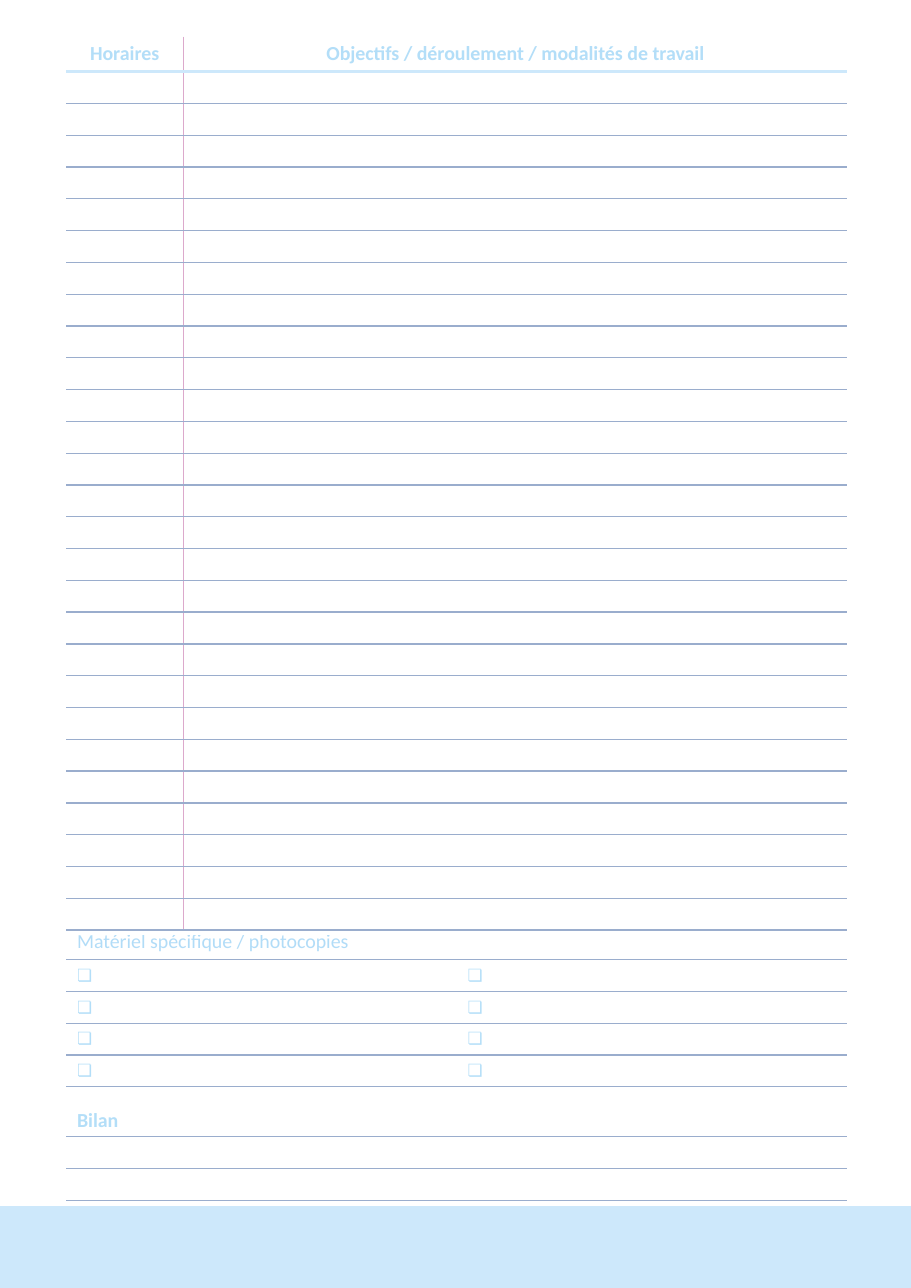
import lxml.etree
import pptx
import pptx.dml.color
import pptx.enum.shapes
import pptx.enum.text
import pptx.oxml.ns
import pptx.util

COLORS = {
    "paper": "FFFFFF",
    "band": "CDE8FB",
    "text": "B3DEF8",
    "caption": "9DD3F6",
    "rule": "9AADCD",
    "margin": "DCA9CC",
}
RULED_ROWS = 27
CHECK_ROWS = 4
CHECKBOX = "❏"


def add_element(parent, tag, **attributes):
    return lxml.etree.SubElement(parent, pptx.oxml.ns.qn(tag), **attributes)


class PlannerPage:
    font = "Calibri"
    left, top = 0.6, 0.65
    column = 7.09 / 20
    row = (8.45 - 0.65) / RULED_ROWS

    def __init__(self, presentation):
        self.width = presentation.slide_width
        self.height = presentation.slide_height
        self.slide = presentation.slides.add_slide(presentation.slide_layouts[6])

    def columns(self, count):
        return pptx.util.Inches(count * self.column)

    def rows(self, count):
        return pptx.util.Inches(count * self.row)

    def row_top(self, row):
        return pptx.util.Inches(self.top) + self.rows(row)

    def color(self, name):
        return pptx.dml.color.RGBColor.from_string(COLORS[name])

    def band(self, row):
        top = self.row_top(row)
        shape = self.slide.shapes.add_shape(
            pptx.enum.shapes.MSO_SHAPE.RECTANGLE, 0, top, self.width, self.height - top)
        shape.shadow.inherit = False
        shape.fill.solid()
        shape.fill.fore_color.rgb = self.color("band")
        shape.line.color.rgb = self.color("band")
        shape.line.width = pptx.util.Pt(1)

    def table(self, row, widths, heights):
        frame = self.slide.shapes.add_table(
            len(heights), len(widths), pptx.util.Inches(self.left), self.row_top(row),
            self.columns(sum(widths)), self.rows(sum(heights)))
        table = frame.table
        table.first_row = table.horz_banding = False
        for table_column, width in zip(table.columns, widths):
            table_column.width = self.columns(width)
        for table_row, height in zip(table.rows, heights):
            table_row.height = self.rows(height)
        return table

    def cell(self, cell, borders):
        cell.margin_top = cell.margin_bottom = pptx.util.Inches(0.02)
        cell.vertical_anchor = pptx.enum.text.MSO_ANCHOR.MIDDLE
        properties = cell._tc.get_or_add_tcPr()
        for side in "LRTB":
            name, points = borders.get(side, (None, 1))
            line = add_element(properties, f"a:ln{side}", w=str(pptx.util.Pt(points)))
            if name:
                fill = add_element(line, "a:solidFill")
                add_element(fill, "a:srgbClr", val=COLORS[name])
            else:
                add_element(line, "a:noFill")
        cell.fill.solid()
        cell.fill.fore_color.rgb = self.color("paper")
        add_element(cell.text_frame.paragraphs[0]._p, "a:endParaRPr", sz="600")

    def text(self, cell, text, size=13, bold=False, color="text", centred=False, opacity=100):
        paragraph = cell.text_frame.paragraphs[0]
        paragraph.text = text
        if centred:
            paragraph.alignment = pptx.enum.text.PP_ALIGN.CENTER
        run = paragraph.runs[0]
        run.font.name = self.font
        run.font.size = pptx.util.Pt(size)
        run.font.bold = bold
        run.font.color.rgb = self.color(color)
        if opacity < 100:
            solid = run._r.rPr.find(pptx.oxml.ns.qn("a:solidFill"))
            add_element(solid[0], "a:alpha", val=str(opacity * 1000))

    def checklist(self):
        heights = [1.1] + [1] * CHECK_ROWS + [0.57, 1, 1, 1]
        spacer = CHECK_ROWS + 1
        table = self.table(26.8, [10, 10], heights)
        rule = ("rule", 1)
        for index in range(len(heights)):
            borders = {}
            if index not in (0, spacer + 1):
                borders["T"] = rule
            if index != spacer:
                borders["B"] = rule
            for column in range(2):
                cell = table.cell(index, column)
                self.cell(cell, borders)
                if 0 < index < spacer:
                    self.text(cell, CHECKBOX, size=11)
        self.text(table.cell(0, 0), "Matériel spécifique / photocopies",
                  color="caption", opacity=78)
        self.text(table.cell(spacer + 1, 0), "Bilan", bold=True)

    def schedule(self):
        heights = [1.1] + [1] * RULED_ROWS
        table = self.table(-1.1, [3, 17], heights)
        rule, heading_rule = ("rule", 1), ("band", 2.25)
        for index in range(len(heights)):
            borders = {"B": rule if index else heading_rule}
            if index:
                borders["T"] = heading_rule if index == 1 else rule
            for column, side in enumerate("RL"):
                self.cell(table.cell(index, column), {**borders, side: ("margin", 1)})
        headings = ["Horaires", "Objectifs / déroulement / modalités de travail"]
        for column, heading in enumerate(headings):
            self.text(table.cell(0, column), heading, bold=True, centred=True)


def main():
    presentation = pptx.Presentation()
    presentation.slide_width = pptx.util.Inches(8.27)
    presentation.slide_height = pptx.util.Inches(11.69)
    page = PlannerPage(presentation)
    page.band(35.65)
    page.checklist()
    page.schedule()
    presentation.save("out.pptx")


if __name__ == "__main__":
    main()
